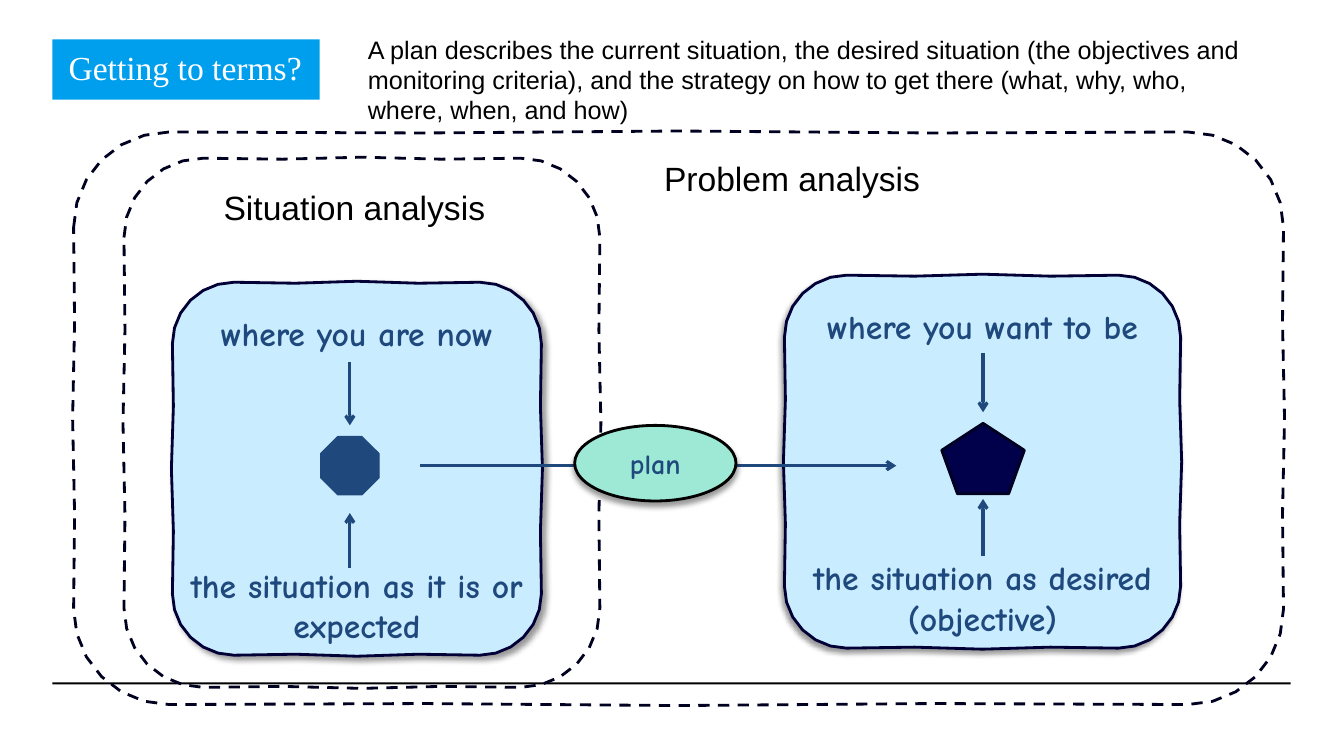
from math import cos, pi, sin

from lxml import etree
from pptx import Presentation
from pptx.dml.color import RGBColor
from pptx.enum.dml import MSO_LINE
from pptx.enum.shapes import MSO_CONNECTOR, MSO_SHAPE
from pptx.enum.text import MSO_ANCHOR, PP_ALIGN
from pptx.oxml.ns import qn
from pptx.util import Inches, Pt

BLACK = RGBColor(0x00, 0x00, 0x00)
WHITE = RGBColor(0xFF, 0xFF, 0xFF)
TITLE_BLUE = RGBColor(0x00, 0x9F, 0xEE)
BOX_BLUE = RGBColor(0xC9, 0xED, 0xFF)
TEXT_BLUE = RGBColor(0x1F, 0x49, 0x7D)
NAVY = RGBColor(0x00, 0x00, 0x4B)
BOX_EDGE = RGBColor(0x00, 0x00, 0x37)
DARK_EDGE = RGBColor(0x00, 0x00, 0x21)
MINT = RGBColor(0x9E, 0xE9, 0xD5)

HAND = dict(name="Comic Neue", size=Pt(24), bold=True)
PLAIN = dict(name="Arial", size=Pt(24), bold=False)
TITLE = dict(name="Times New Roman", size=Pt(24), bold=False)


def write(s, text, font, color, align=PP_ALIGN.CENTER):
    tf = s.text_frame
    tf.word_wrap = True
    p = tf.paragraphs[0]
    p.alignment = align
    r = p.add_run()
    r.text = text
    for key, value in font.items():
        setattr(r.font, key, value)
    r.font.color.rgb = color
    return tf


def label(slide, x, y, w, h, text, font, color=BLACK, align=PP_ALIGN.CENTER):
    s = slide.shapes.add_textbox(Inches(x), Inches(y), Inches(w), Inches(h))
    write(s, text, font, color, align)


def paint(s, fill=None, edge=None, width=2):
    s.shadow.inherit = False
    if fill is None:
        s.fill.background()
    else:
        s.fill.solid()
        s.fill.fore_color.rgb = fill
    if edge is None:
        s.line.fill.background()
    else:
        s.line.color.rgb = edge
        s.line.width = Pt(width)
    return s


def preset(slide, kind, x, y, w, h, **look):
    s = slide.shapes.add_shape(kind, Inches(x), Inches(y), Inches(w), Inches(h))
    return paint(s, **look)


def drop_shadow(s, degrees):
    effects = s._element.spPr.find(qn("a:effectLst"))
    shadow = etree.SubElement(effects, qn("a:outerShdw"), blurRad=str(Pt(4)),
                              dist=str(Pt(3)), dir=str(degrees * 60000),
                              rotWithShape="0")
    color = etree.SubElement(shadow, qn("a:srgbClr"), val="000000")
    etree.SubElement(color, qn("a:alpha"), val="40000")


def arrow(slide, x1, y1, x2, y2):
    s = slide.shapes.add_connector(MSO_CONNECTOR.STRAIGHT, Inches(x1), Inches(y1),
                                   Inches(x2), Inches(y2))
    s.line.color.rgb = TEXT_BLUE
    s.line.width = Pt(2.25)
    # The line element exists once the line is coloured
    ln = s._element.spPr.find(qn("a:ln"))
    etree.SubElement(ln, qn("a:tailEnd"), type="arrow")
    etree.SubElement(s._element.spPr, qn("a:effectLst"))


def sketchy_box(slide, x, y, w, h, **look):
    """Rounded rectangle whose straight sides waver like a pen line."""
    radius, arc_steps, side_steps, waver = min(w, h) / 6, 6, 4, 0.01
    left, right, top, bottom = x + radius, x + w - radius, y + radius, y + h - radius
    centers = [(left, top), (right, top), (right, bottom), (left, bottom)]
    points = []
    for i, (cx, cy) in enumerate(centers):
        start = pi + i * pi / 2
        for k in range(arc_steps + 1):
            a = start + k / arc_steps * pi / 2
            points.append((cx + radius * cos(a), cy + radius * sin(a)))
        # Side from this corner to the next one
        nx, ny = centers[(i + 1) % 4]
        for k in range(1, side_steps):
            t = k / side_steps
            reach = radius + waver * (-1) ** k
            points.append((cx + (nx - cx) * t + cos(a) * reach,
                           cy + (ny - cy) * t + sin(a) * reach))
    points = [(Inches(px), Inches(py)) for px, py in points]
    builder = slide.shapes.build_freeform(*points[0])
    builder.add_line_segments(points[1:], close=True)
    return paint(builder.convert_to_shape(), **look)


def analysis_frame(slide, x, y, w, h, title, title_x, title_y):
    s = sketchy_box(slide, x, y, w, h, edge=DARK_EDGE)
    s.line.dash_style = MSO_LINE.DASH
    label(slide, x + title_x, y + title_y, 2.83, 0.5, title, PLAIN)


def state_box(slide, x, y, w, h, upper, lower, marker, shadow, mid, down, up):
    """Box with a marker, and an arrow to it from the text above and below."""
    drop_shadow(sketchy_box(slide, x, y, w, h, fill=BOX_BLUE, edge=BOX_EDGE), shadow)
    label(slide, x, y + 0.26, w, 0.5, upper, HAND, TEXT_BLUE)
    label(slide, x, y + 2.75, w, 0.91, lower, HAND, TEXT_BLUE)
    kind, mw, mh, look = marker
    preset(slide, kind, x + mid - mw / 2, y + 1.82 - mh / 2, mw, mh, **look)
    for start, end in (down, up):
        arrow(slide, x + mid, y + start, x + mid, y + end)


def header(slide, x, y):
    s = preset(slide, MSO_SHAPE.RECTANGLE, x, y, 2.65, 0.6, fill=TITLE_BLUE)
    tf = write(s, "Getting to terms?", TITLE, WHITE, PP_ALIGN.LEFT)
    margins = dict(margin_left=0.16, margin_top=0.08, margin_right=0.16,
                   margin_bottom=0.12)
    for key, value in margins.items():
        setattr(tf, key, Inches(value))
    tf.word_wrap = False
    tf.vertical_anchor = MSO_ANCHOR.TOP
    label(slide, x + 3.03, y - 0.1, 8.87, 1.01,
          "A plan describes the current situation, the desired situation (the "
          "objectives and monitoring criteria), and the strategy on how to get "
          "there (what, why, who, where, when, and how)",
          dict(PLAIN, size=Pt(18)), align=PP_ALIGN.LEFT)


def plan_link(slide, x, y, w):
    """Arrow between the two states, with the plan on it."""
    arrow(slide, x, y, x + w, y)
    s = preset(slide, MSO_SHAPE.OVAL, x + 1.53, y - 0.4, 1.6, 0.75,
               fill=MINT, edge=BLACK)
    drop_shadow(s, 90)
    tf = write(s, "plan", dict(HAND, size=Pt(20)), TEXT_BLUE)
    tf.vertical_anchor = MSO_ANCHOR.MIDDLE


def main():
    prs = Presentation()
    prs.slide_width, prs.slide_height = Inches(13.33), Inches(7.5)
    slide = prs.slides.add_slide(prs.slide_layouts[6])

    # Footer rule and header
    preset(slide, MSO_SHAPE.RECTANGLE, 0.52, 6.77, 12.28, 0.02, fill=BLACK)
    header(slide, 0.52, 0.39)

    # Dashed frames
    analysis_frame(slide, 1.23, 1.57, 4.72, 5.25, "Situation analysis", 0.87, 0.24)
    analysis_frame(slide, 0.73, 1.31, 12, 5.68, "Problem analysis", 5.71, 0.21)

    # Present and desired state
    octagon = (MSO_SHAPE.OCTAGON, 0.58, 0.58,
               dict(fill=TEXT_BLUE, edge=TEXT_BLUE, width=0.75))
    pentagon = (MSO_SHAPE.REGULAR_PENTAGON, 0.82, 0.7,
                dict(fill=NAVY, edge=DARK_EDGE))
    state_box(slide, 1.71, 2.8, 3.66, 3.7, "where you are now",
              "the situation as it is or expected", octagon, shadow=45,
              mid=1.76, down=(0.79, 1.42), up=(2.84, 2.29))
    state_box(slide, 7.78, 2.73, 3.93, 3.7, "where you want to be",
              "the situation as desired (objective)", pentagon, shadow=135,
              mid=1.97, down=(0.77, 1.36), up=(2.79, 2.22))
    plan_link(slide, 4.17, 4.62, 4.72)

    prs.save("out.pptx")


if __name__ == "__main__":
    main()
